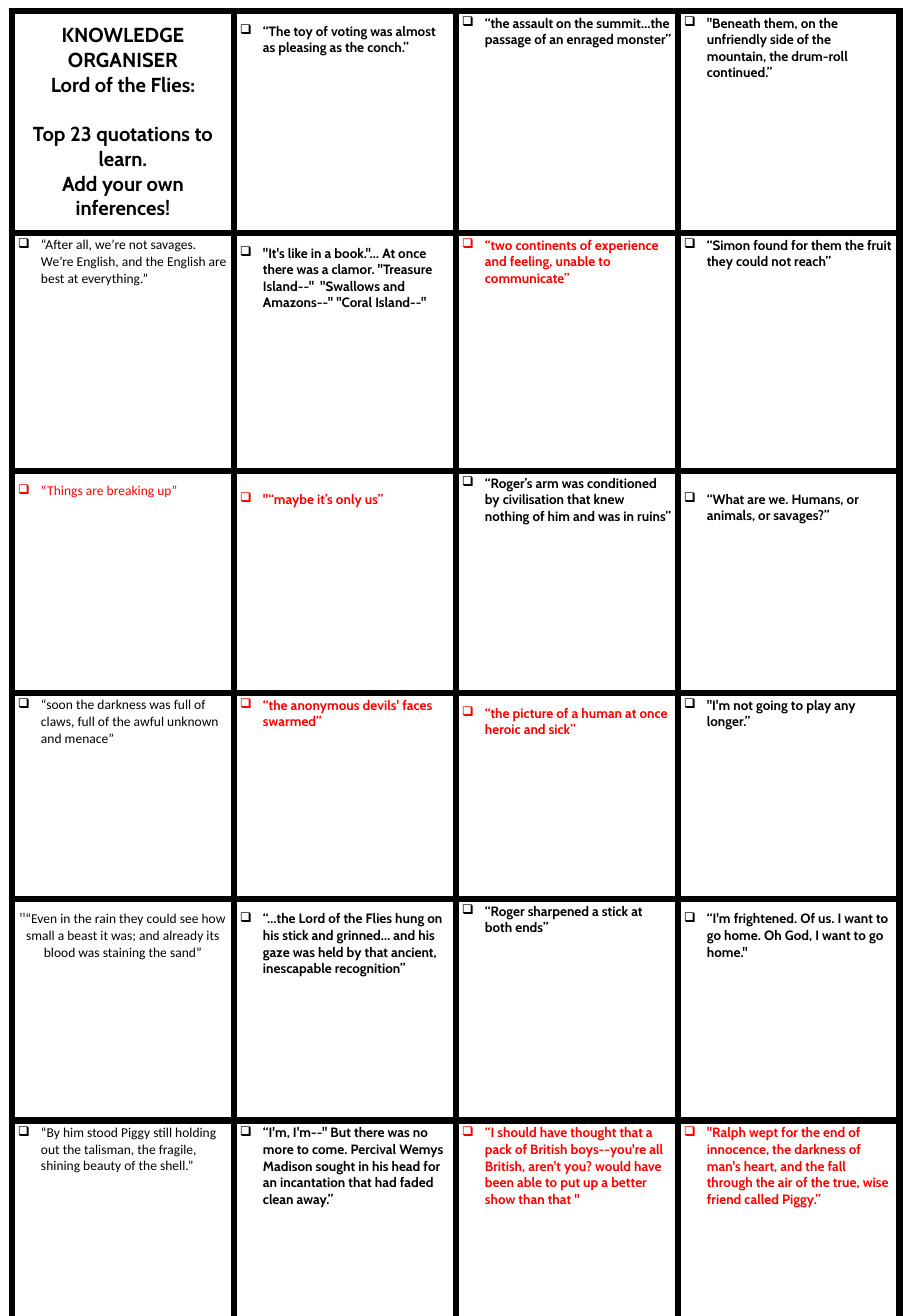
from lxml.etree import SubElement
from pptx import Presentation
from pptx.dml.color import RGBColor
from pptx.enum.text import MSO_ANCHOR as Anchor, PP_ALIGN as Align
from pptx.oxml.ns import qn
from pptx.util import Pt

PX = 914400 / 121.5
BLACK = RGBColor(0, 0, 0)
RED = RGBColor(255, 0, 0)
NAVY = RGBColor(0x00, 0x1D, 0x35)

PAGE_WIDTH, PAGE_HEIGHT = 911, 1316
GRID_LEFT, GRID_TOP = 12, 11
COLUMN_WIDTH = 222
ROW_HEIGHTS = [222, 238, 222, 206, 222, 204]
SIDE_MARGIN, END_MARGIN, HALF_LINE, BULLET_INDENT = 6, 4, 8, 23

# Each quotation: text, colour, half lines of space above it
QUOTES = {
    (0, 1): ("“The toy of voting was almost as pleasing as the conch.”", BLACK, 1),
    (0, 2): ("“the assault on the summit…the passage of an enraged monster”", BLACK, 0),
    (0, 3): ('"Beneath them, on the unfriendly side of the mountain, '
             "the drum-roll continued.”", BLACK, 0),
    (1, 0): ("“After all, we’re not savages. We’re English, and the English are "
             "best at everything.”", BLACK, 0),
    (1, 1): ('"It\'s like in a book."… At once there was a clamor. "Treasure Island--"  '
             '"Swallows and Amazons--" "Coral Island--"', BLACK, 1),
    (1, 2): ("“two continents of experience and feeling, unable to communicate”", RED, 0),
    (1, 3): ("“Simon found for them the fruit they could not reach”", BLACK, 0),
    (2, 0): ("“Things are breaking up”", RED, 1),
    (2, 1): ('"“maybe it’s only us”', RED, 2),
    (2, 2): ("“Roger’s arm was conditioned by civilisation that knew nothing of him "
             "and was in ruins”", BLACK, 0),
    (2, 3): ("“What are we. Humans, or animals, or savages?”", BLACK, 2),
    (3, 0): ("“soon the darkness was full of claws, full of the awful unknown "
             "and menace”", BLACK, 0),
    (3, 1): ("“the anonymous devils' faces swarmed”", RED, 0),
    (3, 2): ("“the picture of a human at once heroic and sick”", RED, 1),
    (3, 3): ('"I\'m not going to play any longer.”', BLACK, 0),
    (4, 1): ("“…the Lord of the Flies hung on his stick and grinned… and his gaze "
             "was held by that ancient, inescapable recognition”", BLACK, 1),
    (4, 2): ("“Roger sharpened a stick at both ends”", BLACK, 0),
    (4, 3): ("“I'm frightened. Of us. I want to go home. Oh God, I want to go home.\"",
             BLACK, 1),
    (5, 0): ("“By him stood Piggy still holding out the talisman, the fragile, "
             "shining beauty of the shell.”", BLACK, 0),
    (5, 1): ("“I'm, I'm--\" But there was no more to come. Percival Wemys Madison sought "
             "in his head for an incantation that had faded clean away.”", BLACK, 0),
    (5, 2): ("“I should have thought that a pack of British boys--you're all British, "
             "aren't you? would have been able to put up a better show than that \"", RED, 0),
    (5, 3): ('"Ralph wept for the end of innocence, the darkness of man\'s heart, and the '
             "fall through the air of the true, wise friend called Piggy.”", RED, 0),
}
TITLE = ["KNOWLEDGE ORGANISER", "Lord of the Flies:",
         "Top 23 quotations to learn.", "Add your own inferences!"]
RAIN_QUOTE = ("“Even in the rain they could see how small a beast it was; "
              "and already its blood was staining the sand”")


def px(length):
    return round(length * PX)


def add_text(para, text, *, font="Cabin", size=8, bold=True, color=BLACK):
    span = para.add_run()
    span.text = text
    span.font.name = font
    span.font.size = Pt(size)
    span.font.bold = bold
    span.font.color.rgb = color


def add_bullet(para):
    props = para._p.get_or_add_pPr()
    props.set("marL", str(px(BULLET_INDENT)))
    props.set("indent", str(-px(BULLET_INDENT)))
    SubElement(props, qn("a:buChar"), char="❑")


def format_cell(cell, half_lines=0, anchor=Anchor.TOP):
    cell.vertical_anchor = anchor
    cell.margin_left = cell.margin_right = px(SIDE_MARGIN)
    cell.margin_top = px(END_MARGIN + half_lines * HALF_LINE)
    cell.margin_bottom = px(END_MARGIN)
    props = cell._tc.get_or_add_tcPr()
    for side in ("lnL", "lnR", "lnT", "lnB"):
        line = SubElement(props, qn(f"a:{side}"), w=str(Pt(4.5)))
        fill = SubElement(line, qn("a:solidFill"))
        SubElement(fill, qn("a:srgbClr"), val=str(BLACK))
    cell.fill.background()


def add_grid(page):
    frame = page.shapes.add_table(len(ROW_HEIGHTS), 4, px(GRID_LEFT), px(GRID_TOP),
                                  px(4 * COLUMN_WIDTH), px(sum(ROW_HEIGHTS)))
    grid = frame.table
    grid.first_row = grid.horz_banding = False
    for column in grid.columns:
        column.width = px(COLUMN_WIDTH)
    for row, height in zip(grid.rows, ROW_HEIGHTS):
        row.height = px(height)
    return grid


def fill_title(cell):
    format_cell(cell, anchor=Anchor.MIDDLE)
    box = cell.text_frame
    for index, text in enumerate(TITLE):
        para = box.add_paragraph() if index else box.paragraphs[0]
        para.alignment = Align.CENTER
        if index == 2:
            para.space_before = Pt(14.6)
        add_text(para, text, size=12)


def fill_quote(cell, column, text, color, half_lines):
    format_cell(cell, half_lines)
    para = cell.text_frame.paragraphs[0]
    add_bullet(para)
    add_text(para, text, color=color, bold=column > 0,
             font="Cabin" if column else "Calibri")


def fill_rain_quote(cell):
    format_cell(cell, half_lines=1)
    para = cell.text_frame.paragraphs[0]
    para.alignment = Align.CENTER
    add_text(para, '"', bold=False, color=NAVY)
    add_text(para, RAIN_QUOTE, font="Calibri", bold=False)


def main():
    deck = Presentation()
    deck.slide_width, deck.slide_height = px(PAGE_WIDTH), px(PAGE_HEIGHT)
    page = deck.slides.add_slide(deck.slide_layouts[6])
    grid = add_grid(page)

    # Title and the one centred quotation
    fill_title(grid.cell(0, 0))
    fill_rain_quote(grid.cell(4, 0))

    # Bulleted quotations
    for (row, column), quote in QUOTES.items():
        fill_quote(grid.cell(row, column), column, *quote)

    deck.save("out.pptx")


if __name__ == "__main__":
    main()
